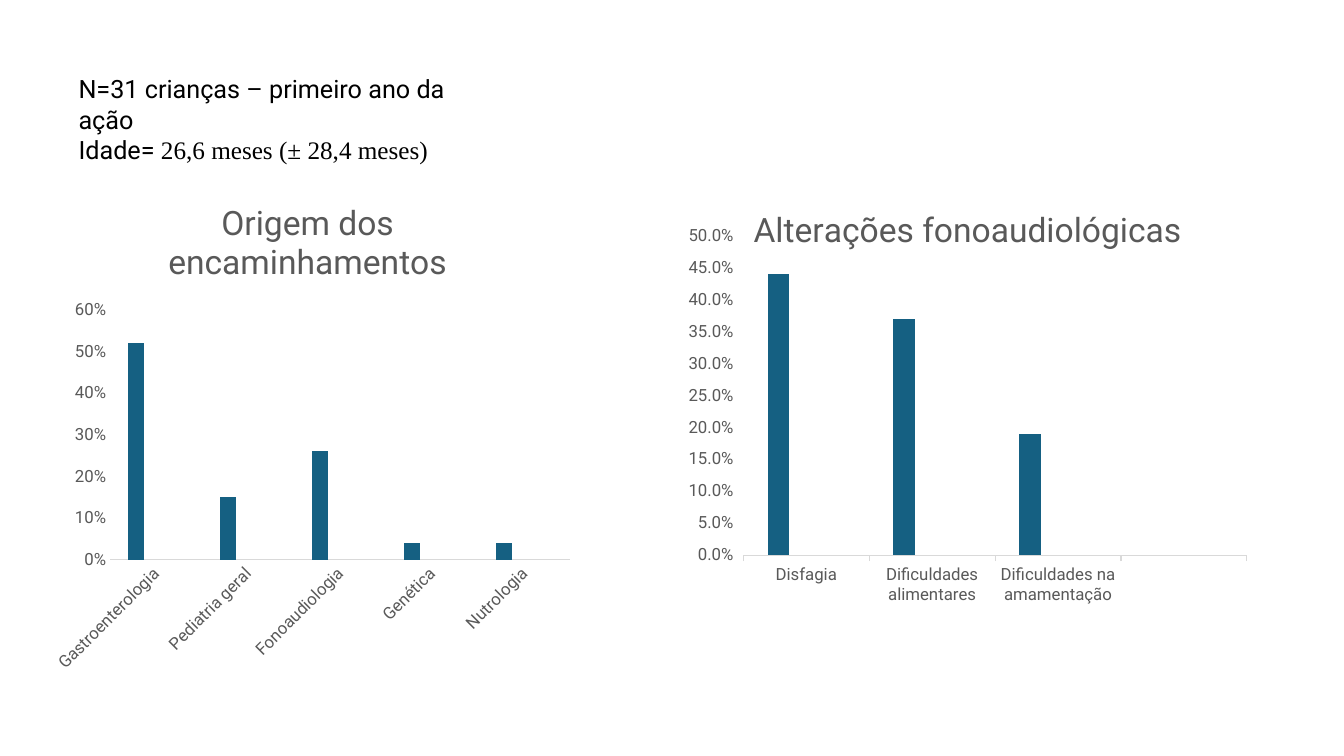
import lxml.etree
import pptx
import pptx.chart.data
import pptx.dml.color
import pptx.enum.chart
import pptx.enum.text
import pptx.oxml.ns
import pptx.util

Cm = pptx.util.Cm
Pt = pptx.util.Pt
qn = pptx.oxml.ns.qn
TickMark = pptx.enum.chart.XL_TICK_MARK


def paint(color_format, hex_color):
    color_format.rgb = pptx.dml.color.RGBColor.from_string(hex_color)


def style_font(font, size, color, name="Roboto"):
    font.size = Pt(size)
    font.name = name
    font.bold = False
    paint(font.color, color)


def write(paragraph, text, size=18, color="000000", name="Roboto"):
    run = paragraph.add_run()
    run.text = text
    style_font(run.font, size, color, name)


def manual_layout(parent, **settings):
    """Return a fresh layout element, after removing any existing one."""
    for old_layout in parent.findall(qn("c:layout")):
        parent.remove(old_layout)
    layout = lxml.etree.Element(qn("c:layout"))
    manual = lxml.etree.SubElement(layout, qn("c:manualLayout"))
    for tag, value in settings.items():
        lxml.etree.SubElement(manual, qn(f"c:{tag}")).set("val", str(value))
    return layout


class ResultsSlide:
    ink = "000000"
    muted = "595959"
    axis_line = "D9D9D9"
    series_colors = ("156082", "E97132", "196B24")

    def __init__(self, presentation):
        self.slide = presentation.slides.add_slide(presentation.slide_layouts[6])

    def add_text(self, box, paragraphs):
        frame = self.slide.shapes.add_textbox(*map(Cm, box)).text_frame
        frame.word_wrap = True
        frame.auto_size = pptx.enum.text.MSO_AUTO_SIZE.SHAPE_TO_FIT_TEXT
        for index, runs in enumerate(paragraphs):
            paragraph = frame.add_paragraph() if index else frame.paragraphs[0]
            for text, font_name in runs:
                write(paragraph, text, color=self.ink, name=font_name)

    def add_columns(self, box, title, title_at, plot_at, shares, top, step,
                    number_format, tick, label_angle=None):
        # Data: only the first of the three series has values
        data = pptx.chart.data.CategoryChartData(number_format="0%")
        data.categories = list(shares)
        empty = [None] * len(shares)
        for name, values in (("Series 1", shares.values()),
                             ("Series 2", empty), ("Series 3", empty)):
            data.add_series(name, values)
        chart = self.slide.shapes.add_chart(
            pptx.enum.chart.XL_CHART_TYPE.COLUMN_CLUSTERED,
            *map(Cm, box), data).chart
        chart.has_legend = False
        style_font(chart.font, 10, self.ink)

        # Title
        chart.has_title = True
        write(chart.chart_title.text_frame.paragraphs[0], title,
              size=24, color=self.muted)
        chart.chart_title.include_in_layout = False
        heading = chart.chart_title._element
        left, upper = title_at
        heading.find(qn("c:tx")).addnext(manual_layout(
            heading, xMode="edge", yMode="edge", x=left, y=upper))

        # Columns
        columns = chart.plots[0]
        columns.gap_width = 219
        columns.overlap = -27
        columns.vary_by_categories = False
        for series, color in zip(columns.series, self.series_colors):
            series.format.fill.solid()
            paint(series.format.fill.fore_color, color)
        plot_area = chart._chartSpace.chart.plotArea
        x, y, w, h = plot_at
        plot_area.insert(0, manual_layout(
            plot_area, layoutTarget="inner", xMode="edge", yMode="edge",
            x=x, y=y, w=w, h=h))

        # Axes
        for axis in (chart.category_axis, chart.value_axis):
            axis.has_major_gridlines = False
            axis.major_tick_mark = tick
            axis.minor_tick_mark = TickMark.NONE
            style_font(axis.tick_labels.font, 12, self.muted)
        baseline = chart.category_axis.format.line
        baseline.width = Pt(0.75)
        baseline.fill.solid()
        paint(baseline.fill.fore_color, self.axis_line)
        if label_angle is not None:
            body = chart.category_axis._element.find(
                f"{qn('c:txPr')}/{qn('a:bodyPr')}")
            body.set("rot", str(label_angle * 60000))
            body.set("vert", "horz")
        scale = chart.value_axis
        scale.format.line.fill.background()
        scale.minimum_scale = 0
        scale.maximum_scale = top
        scale.major_unit = step
        scale.tick_labels.number_format = number_format
        scale.tick_labels.number_format_is_linked = False


def main():
    presentation = pptx.Presentation()
    presentation.slide_width = Cm(33.87)
    presentation.slide_height = Cm(19.05)
    results = ResultsSlide(presentation)

    # Origin of the referrals
    results.add_columns(
        (1.14, 4.62, 13.41, 12.7), "Origem dos encaminhamentos",
        title_at=(0.22, 0.02), plot_at=(0.122, 0.251, 0.865, 0.496),
        shares={"Gastroenterologia": 0.52, "Pediatria geral": 0.15,
                "Fonoaudiologia": 0.26, "Genética": 0.04, "Nutrologia": 0.04},
        top=0.6, step=0.1, number_format="0%", tick=TickMark.NONE,
        label_angle=-45)

    # Speech therapy findings, with a free slot at the end
    results.add_columns(
        (16.94, 4.62, 14.6, 11.13), "Alterações fonoaudiológicas",
        title_at=(0.13, 0.04), plot_at=(0.123, 0.118, 0.869, 0.724),
        shares={"Disfagia": 0.44, "Dificuldades alimentares": 0.37,
                "Dificuldades na amamentação": 0.19, "": None},
        top=0.5, step=0.05, number_format="0.0%", tick=TickMark.OUTSIDE)

    # Sample size and age
    results.add_text((1.73, 1.73, 10.9, 1.8), [
        [("N=31 crianças – primeiro ano da ação", "Roboto")],
        [("Idade= ", "Roboto"),
         ("26,6 meses (± 28,4 meses)", "Times New Roman")],
    ])

    presentation.save("out.pptx")


if __name__ == "__main__":
    main()
